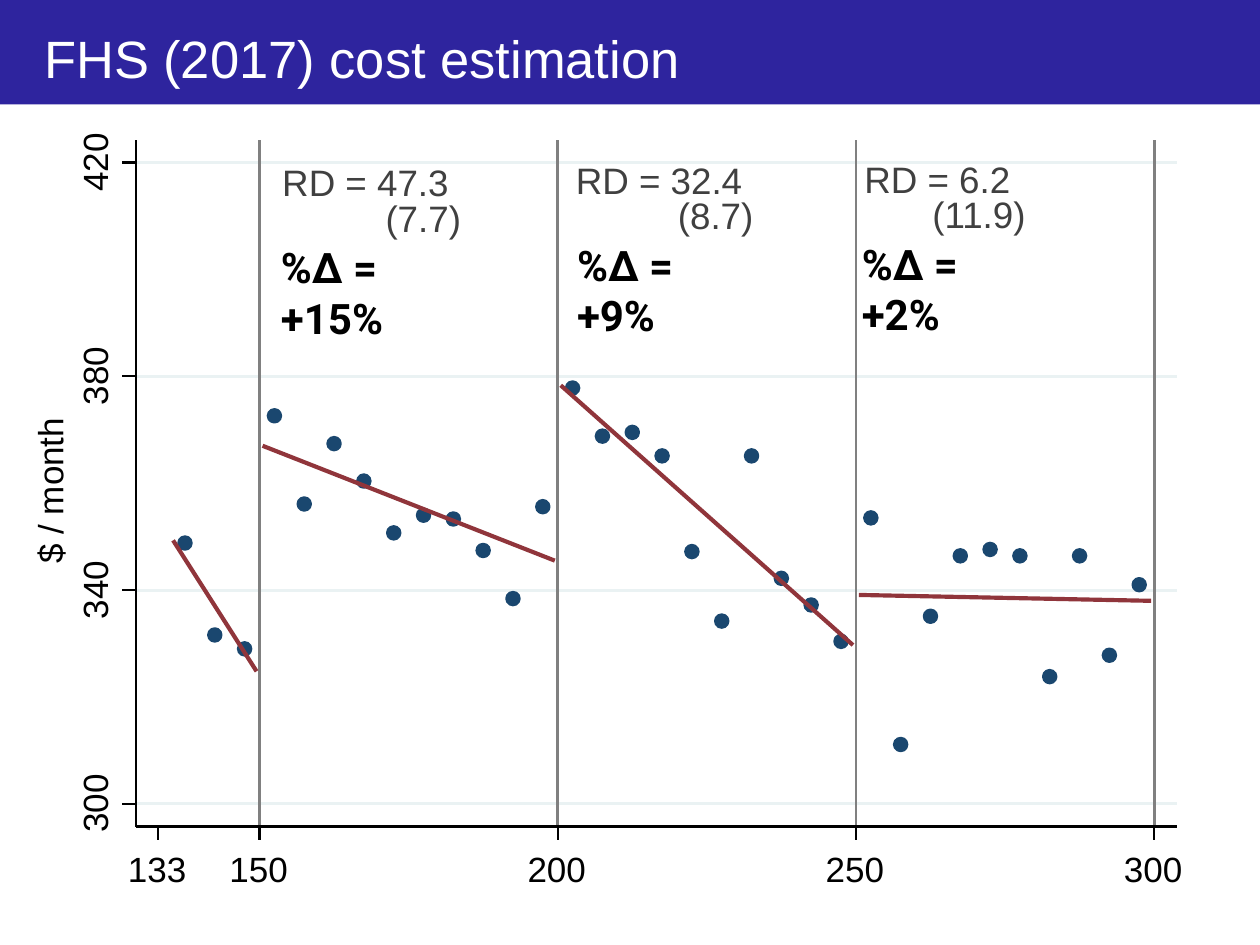
from lxml.etree import SubElement
from pptx import Presentation
from pptx.dml.color import RGBColor
from pptx.enum.shapes import MSO_CONNECTOR, MSO_SHAPE
from pptx.enum.text import MSO_ANCHOR
from pptx.oxml.ns import qn
from pptx.util import Inches, Pt

TITLE = "FHS (2017) cost estimation"
Y_TITLE = "$ / month"
X_TICKS = [133, 150, 200, 250, 300]
Y_TICKS = [300, 340, 380, 420]
FIRST_BIN, BIN_WIDTH = 137.5, 5
COSTS = [
    348.8, 331.6, 329.0,
    372.6, 356.1, 367.4, 360.4, 350.7, 354.0, 353.3, 347.4, 338.4, 355.6,
    377.8, 368.8, 369.5, 365.1, 347.2, 334.2, 365.1, 342.2, 337.2, 330.4,
    353.5, 311.1, 335.1, 346.4, 347.6, 346.4, 323.8, 346.4, 327.8, 341.0,
]
FITS = [
    ((135.5, 349.3), (149.5, 324.8)),
    ((150.5, 367.0), (199.5, 345.5)),
    ((200.5, 378.3), (249.5, 329.7)),
    ((250.5, 339.1), (299.5, 338.0)),
]
ESTIMATES = [
    {"jump": "RD = 47.3", "error": "(7.7)", "change": "%Δ = +15%",
     "left": 2.24, "top": 1.27, "error_left": 2.42, "indent": 0.64, "change_left": 2.23, "width": 1.51},
    {"jump": "RD = 32.4", "error": "(8.7)", "change": "%Δ = +9%",
     "left": 4.57, "top": 1.25, "error_left": 4.74, "indent": 0.64, "change_left": 4.58, "width": 1.34},
    {"jump": "RD = 6.2", "error": "(11.9)", "change": "%Δ = +2%",
     "left": 6.86, "top": 1.24, "error_left": 7.25, "indent": 0.15, "change_left": 6.84, "width": 1.34},
]

LEFT, RIGHT, TOP, BOTTOM = 1.08, 9.34, 1.11, 6.56
TICK, DOT = 0.11, 0.1
LABEL_WIDTH, LABEL_HEIGHT = 0.61, 0.39
BLACK, WHITE, GRAY = "000000", "FFFFFF", "404040"
NAVY, MAROON, BANNER = "1A476F", "90353B", "2E249E"
GRID, CUTOFF = "EAF2F3", "808080"


def x_at(value):
    return 2.06 + (value - 150) * 7.1 / 150


def y_at(cost):
    return 6.38 - (cost - 300) * 5.09 / 120


def color(hex_string):
    return RGBColor.from_string(hex_string)


def add_box(kind, left, top, width, height, fill, line_width=0, line=None):
    shape = slide.shapes.add_shape(kind, Inches(left), Inches(top), Inches(width), Inches(height))
    shape.shadow.inherit = False
    shape.fill.solid()
    shape.fill.fore_color.rgb = color(fill)
    if line_width:
        shape.line.color.rgb = color(line or fill)
        shape.line.width = Pt(line_width)
    else:
        shape.line.fill.background()


def add_line(x1, y1, x2, y2, line_color=BLACK, width=1.25):
    connector = slide.shapes.add_connector(
        MSO_CONNECTOR.STRAIGHT, Inches(x1), Inches(y1), Inches(x2), Inches(y2))
    connector.line.color.rgb = color(line_color)
    connector.line.width = Pt(width)
    SubElement(connector._element.spPr, qn("a:effectLst"))


def add_text(shapes, text, left, top, width, height, size=20, font_color=BLACK,
             font="Arial", bold=False, rotation=0, indent=0, anchor=MSO_ANCHOR.TOP):
    box = shapes.add_textbox(Inches(left), Inches(top), Inches(width), Inches(height))
    box.rotation = rotation
    frame = box.text_frame
    frame.word_wrap = True
    frame.vertical_anchor = anchor
    frame.margin_left = frame.margin_right = frame.margin_top = frame.margin_bottom = 0
    paragraph = frame.paragraphs[0]
    if indent:
        paragraph._p.get_or_add_pPr().set("marL", str(Inches(indent)))
    run = paragraph.add_run()
    run.text = text
    run.font.size = Pt(size)
    run.font.name = font
    run.font.bold = bold
    run.font.color.rgb = color(font_color)


def add_fit(start, end):
    points = [(Inches(x_at(value)), Inches(y_at(cost))) for value, cost in (start, end)]
    builder = slide.shapes.build_freeform(*points[0])
    builder.add_line_segments(points[1:], close=False)
    shape = builder.convert_to_shape()
    shape.shadow.inherit = False
    shape.fill.background()
    shape.line.color.rgb = color(MAROON)
    shape.line.width = Pt(2.38)


presentation = Presentation()
presentation.slide_width = Inches(10)
presentation.slide_height = Inches(7.5)
slide = presentation.slides.add_slide(presentation.slide_layouts[6])

add_box(MSO_SHAPE.RECTANGLE, 0, 0, 10, 0.83, BANNER)
add_text(slide.shapes, TITLE, 0.35, 0.17, 9.38, 0.58, 30, WHITE, anchor=MSO_ANCHOR.MIDDLE)
add_box(MSO_SHAPE.RECTANGLE, LEFT, TOP + 0.05, RIGHT - LEFT, BOTTOM - TOP, WHITE, 1.25)

for cost in Y_TICKS:
    add_line(LEFT, y_at(cost), RIGHT, y_at(cost), GRID, 1.63)
for value in X_TICKS[1:]:
    add_line(x_at(value), BOTTOM, x_at(value), TOP, CUTOFF, 1.63)

for index, cost in enumerate(COSTS):
    center = x_at(FIRST_BIN + index * BIN_WIDTH)
    add_box(MSO_SHAPE.OVAL, center - DOT / 2, y_at(cost) - DOT / 2, DOT, DOT, NAVY, 1.63)
for start, end in FITS:
    add_fit(start, end)

add_line(LEFT, BOTTOM, LEFT, TOP)
for cost in Y_TICKS:
    add_line(LEFT, y_at(cost), LEFT - TICK, y_at(cost))
    add_text(slide.shapes, str(cost), 0.47, y_at(cost) - 0.27, LABEL_WIDTH, LABEL_HEIGHT, rotation=270)
add_line(LEFT, BOTTOM, RIGHT, BOTTOM)
for value in X_TICKS:
    add_line(x_at(value), BOTTOM, x_at(value), BOTTOM + TICK)
    add_text(slide.shapes, str(value), x_at(value) - 0.24, 6.73, LABEL_WIDTH, LABEL_HEIGHT)

for estimate in ESTIMATES:
    top = estimate["top"]
    group = slide.shapes.add_group_shape()
    add_text(group.shapes, estimate["jump"], estimate["left"], top, 1.4, 0.35, 21, GRAY)
    add_text(group.shapes, estimate["error"], estimate["error_left"], top + 0.28, 1.26, 0.35,
             21, GRAY, indent=estimate["indent"])
    add_text(slide.shapes, estimate["change"], estimate["change_left"], top + 0.65,
             estimate["width"], 0.4, 24, font="Roboto", bold=True)
add_text(slide.shapes, Y_TITLE, -0.19, 3.72, 1.17, 0.34, rotation=270)

presentation.save("out.pptx")
